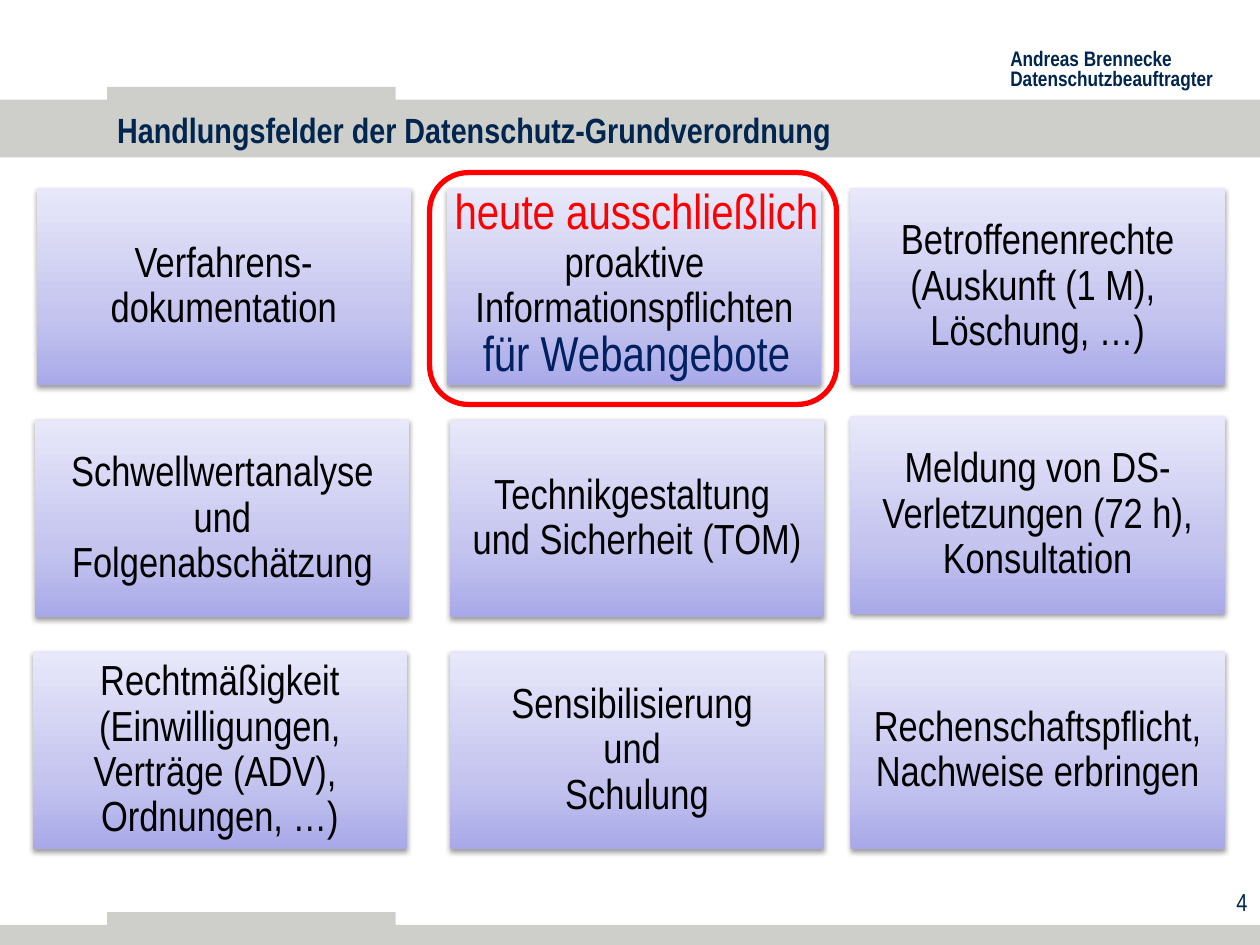
from lxml import etree
from pptx import Presentation
from pptx.dml.color import RGBColor
from pptx.enum.shapes import MSO_SHAPE
from pptx.enum.text import MSO_ANCHOR, MSO_AUTO_SIZE, PP_ALIGN
from pptx.oxml import parse_xml
from pptx.util import Inches, Pt

RECT, ROUND = MSO_SHAPE.RECTANGLE, MSO_SHAPE.ROUNDED_RECTANGLE
LEFT, CENTER, RIGHT = PP_ALIGN.LEFT, PP_ALIGN.CENTER, PP_ALIGN.RIGHT
TOP, MIDDLE = MSO_ANCHOR.TOP, MSO_ANCHOR.MIDDLE
FIXED = MSO_AUTO_SIZE.NONE
NS = "http://schemas.openxmlformats.org/drawingml/2006/main"

COLORS = {"gray": "CECFCB", "navy": "00254F", "blue": "002060",
          "red": "FF0000", "black": "000000"}
FADE = [(0, "A9A9E9"), (35, "C4C4EF"), (100, "E8E8FA")]

# The grid has 100 columns and 75 rows on a slide of 10 by 7.5 inches.
COLS, ROWS = 100, 75
CARD_W, CARD_H, PITCH, FIRST = 29.7, 15.7, 18.4, 14.9
LANES = [2.8, 35.7, 67.5]

# Text, then the card's shift from its grid place
CARDS = [
    [("Verfahrens-dokumentation", 0.1, 0),
     ("proaktive Informationspflichten", -0.2, 0),
     ("Betroffenenrechte (Auskunft (1 M), \nLöschung, …)", 0, 0)],
    [("Schwellwertanalyse und Folgenabschätzung", 0, 0),
     ("Technikgestaltung \nund Sicherheit (TOM)", 0, 0),
     ("Meldung von DS-Verletzungen (72 h), Konsultation", 0, -0.3)],
    [("Rechtmäßigkeit (Einwilligungen, Verträge (ADV), \nOrdnungen, …)", -0.2, 0),
     ("Sensibilisierung \nund \nSchulung", 0, 0),
     ("Rechenschaftspflicht, Nachweise erbringen", 0, 0)],
]


class Deck:
    """Holds the style and the current slide."""

    def __init__(self):
        self.prs = Presentation()
        self.prs.slide_width, self.prs.slide_height = Inches(10), Inches(7.5)
        self.slide = self.prs.slides.add_slide(self.prs.slide_layouts[5])
        self.font = "Arial Narrow"

    def place(self, x, y, w, h):
        """Turn grid columns and rows into slide lengths."""
        col = self.prs.slide_width / COLS
        row = self.prs.slide_height / ROWS
        return [round(n) for n in (x * col, y * row, w * col, h * row)]

    def fill_in(self, para, text, size, color, align=LEFT, bold=False, **form):
        """Put formatted text into a paragraph."""
        para.text = text
        for key, val in {"alignment": align, **form}.items():
            setattr(para, key, val)
        look = {"name": self.font, "size": Pt(size), "bold": bold}
        for run in para.runs:
            for key, val in look.items():
                setattr(run.font, key, val)
            run.font.color.rgb = RGBColor.from_string(COLORS[color])

    def frame(self, shape, anchor=TOP, wrap=True):
        form = {"auto_size": FIXED, "word_wrap": wrap, "vertical_anchor": anchor}
        for key, val in form.items():
            setattr(shape.text_frame, key, val)
        return shape.text_frame

    def shape(self, kind, spot):
        shape = self.slide.shapes.add_shape(kind, *self.place(*spot))
        shape.shadow.inherit = False
        return shape

    def bar(self, *spot):
        bar = self.shape(RECT, spot)
        bar.fill.solid()
        bar.fill.fore_color.rgb = RGBColor.from_string(COLORS["gray"])
        bar.line.fill.background()

    def title(self, text, *spot):
        title = self.slide.shapes.title
        title.left, title.top, title.width, title.height = self.place(*spot)
        # Move the title above the bars
        title.element.getparent().append(title.element)
        frame = self.frame(title, MIDDLE)
        self.fill_in(frame.paragraphs[0], text, 20, "navy", bold=True)

    def text(self, lines, *spot, wrap=True):
        """Add a box with one paragraph per (text, format) pair."""
        box = self.slide.shapes.add_textbox(*self.place(*spot))
        frame = self.frame(box, wrap=wrap)
        for i, (text, form) in enumerate(lines):
            para = frame.add_paragraph() if i else frame.paragraphs[0]
            self.fill_in(para, text, **form)

    def card(self, text, *spot):
        card = self.shape(RECT, spot)
        card.line.fill.background()
        self.fade(card)
        frame = self.frame(card, MIDDLE)
        for side in ("left", "right", "top", "bottom"):
            setattr(frame, f"margin_{side}", Inches(0.1))
        self.fill_in(frame.paragraphs[0], text, 24, "black", CENTER, line_spacing=0.9)

    def fade(self, shape):
        """Give a shape a three-stop gradient and a soft shadow."""
        stops = "".join(f'<a:gs pos="{pos * 1000}"><a:srgbClr val="{color}"/></a:gs>'
                        for pos, color in FADE)
        props = shape.element.spPr
        props.find(f"{{{NS}}}prstGeom").addnext(parse_xml(
            f'<a:gradFill xmlns:a="{NS}" rotWithShape="1"><a:gsLst>{stops}</a:gsLst>'
            '<a:lin ang="16200000" scaled="0"/></a:gradFill>'))
        glow = etree.SubElement(
            props.find(f"{{{NS}}}effectLst"), f"{{{NS}}}outerShdw",
            blurRad=str(Pt(3.1)), dist=str(Pt(1.6)), dir="5400000", rotWithShape="0")
        tint = etree.SubElement(glow, f"{{{NS}}}srgbClr", val=COLORS["black"])
        etree.SubElement(tint, f"{{{NS}}}alpha", val="38000")

    def ring(self, *spot):
        ring = self.shape(ROUND, spot)
        ring.fill.background()
        ring.line.color.rgb = RGBColor.from_string(COLORS["red"])
        ring.line.width = Pt(3)


def main():
    deck = Deck()
    for spot in [(0, 7.9, 100, 4.6), (0, 73.4, 100, 1.6),
                 (8.5, 6.9, 22.9, 1.3), (8.5, 72.4, 22.9, 1.3)]:
        deck.bar(*spot)
    owner = {"size": 12, "color": "navy", "bold": True, "line_spacing": 0.8}
    deck.text([("Andreas Brennecke\nDatenschutzbeauftragter", owner)],
              79.2, 3.5, 18.3, 4.2, wrap=False)
    deck.title("Handlungsfelder der Datenschutz-Grundverordnung", 8.3, 8.2, 87, 4.2)
    deck.text([("4", {"size": 14, "color": "navy", "align": RIGHT})],
              77.8, 69.9, 22.2, 4.3)

    for row, cards in enumerate(CARDS):
        for lane, (text, dx, dy) in zip(LANES, cards):
            deck.card(text, lane + dx, FIRST + row * PITCH + dy, CARD_W, CARD_H)

    deck.ring(34.1, 13.7, 32.3, 18.4)
    note = {"size": 28, "align": CENTER}
    deck.text([("heute ausschließlich", {**note, "color": "red"}),
               ("für Webangebote", {**note, "color": "blue", "space_before": Pt(48)})],
              34.9, 13.8, 31.2, 17.5, wrap=False)
    deck.prs.save("out.pptx")


if __name__ == "__main__":
    main()
